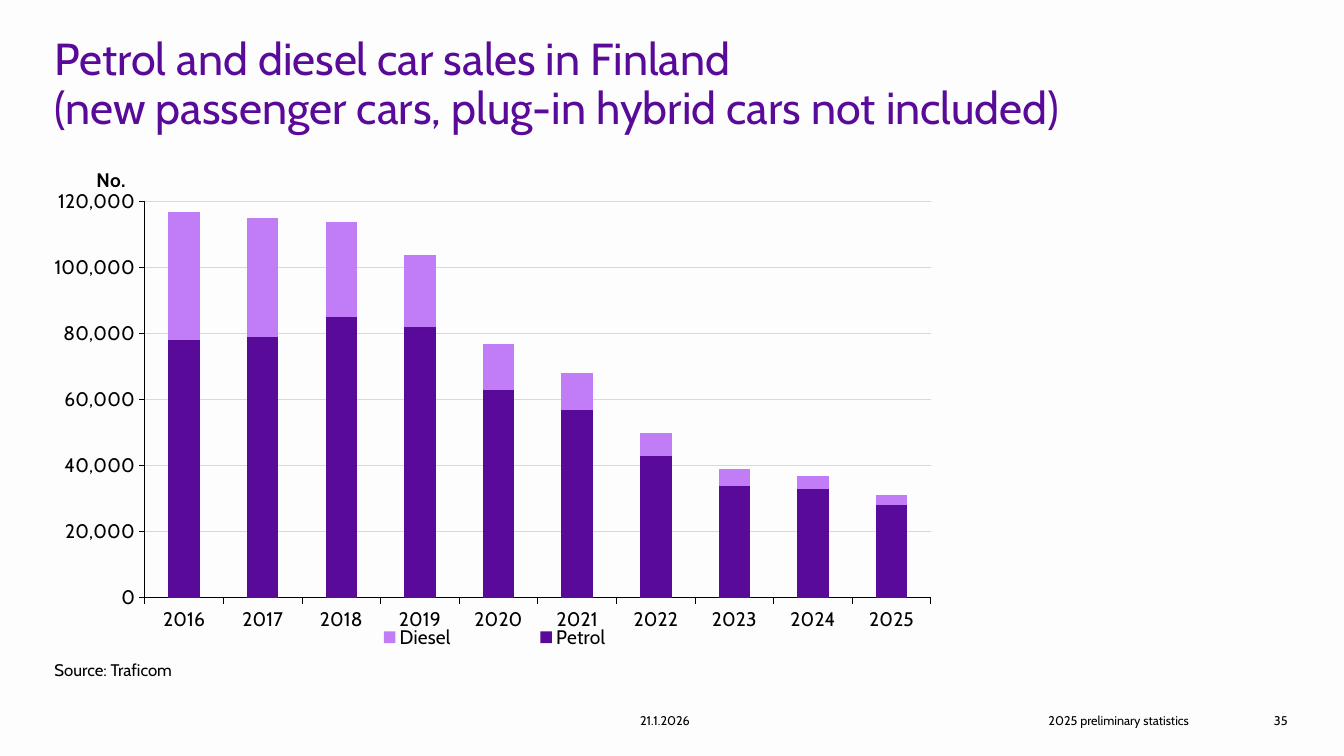
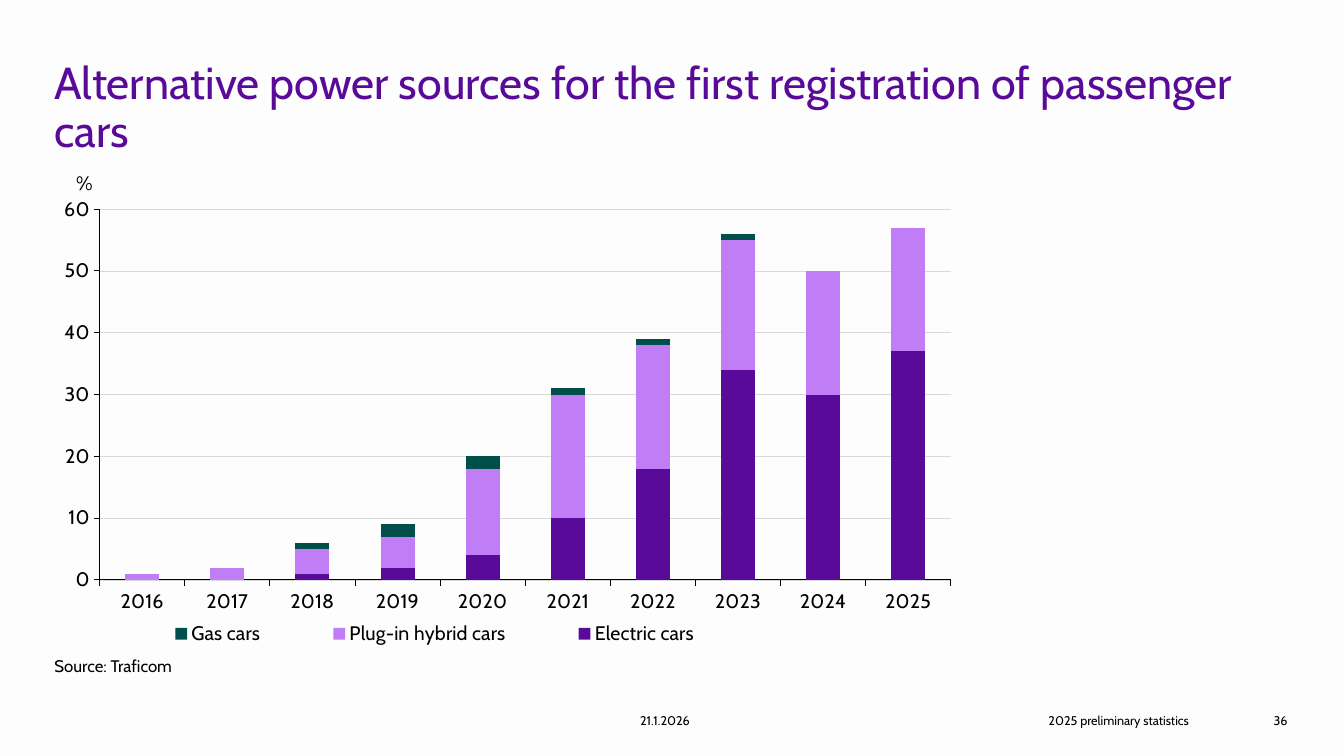
from lxml.etree import SubElement
from pptx import Presentation
from pptx.chart.data import CategoryChartData as Data
from pptx.dml.color import RGBColor
from pptx.enum.chart import XL_CHART_TYPE as Kind, XL_LEGEND_POSITION as Side, XL_TICK_MARK as Tick
from pptx.enum.text import MSO_ANCHOR as Anchor, PP_ALIGN as Align
from pptx.oxml.ns import qn
from pptx.util import Inches, Pt

FONT = "Cabin"
PAPER = RGBColor(0xFE, 0xFD, 0xFD)
BLACK = RGBColor(0, 0, 0)
PURPLE = RGBColor(0x59, 0x0A, 0x99)
LILAC = RGBColor(0xC0, 0x7D, 0xF6)
GREEN = RGBColor(0x00, 0x4F, 0x4B)
GREY = RGBColor(0xD9, 0xD9, 0xD9)
LEFT = 0.54
LABEL = (0.02, 0)
YEARS = [str(year) for year in range(2016, 2026)]

SLIDES = [
    {
        "lines": ["Petrol and diesel car sales in Finland",
                  "(new passenger cars, plug-in hybrid cars not included)"],
        "top": 0.32, "page": "35", "source": 6.52,
        "chart": (1.61, 8.78, 4.91),
        "unit": "No.", "bold": True, "max": 120000, "step": 20000,
        "plot": (0.08, 0.08, 0.91, 0.8),
        "legend": (0.26, 0.92, 0.45, 0.08),
        "series": [
            ("Petrol", PURPLE, [78000, 79000, 85000, 82000, 63000,
                                57000, 43000, 34000, 33000, 28000]),
            ("Diesel", LILAC, [39000, 36000, 29000, 22000, 14000,
                               11000, 7000, 5000, 4000, 3000]),
        ],
    },
    {
        "lines": ["Alternative power sources for the first registration of passenger cars"],
        "top": 0.55, "page": "36", "source": 6.48,
        "chart": (1.64, 8.98, 4.84),
        "unit": "%", "bold": False, "max": 60, "step": 10,
        "plot": (0.05, 0.09, 0.94, 0.76),
        "legend": (0.06, 0.92, 0.72, 0.08),
        "series": [
            ("Electric cars", PURPLE, [0, 0, 1, 2, 4, 10, 18, 34, 30, 37]),
            ("Plug-in hybrid cars", LILAC, [1, 2, 4, 5, 14, 20, 20, 21, 20, 20]),
            ("Gas cars", GREEN, [0, 0, 1, 2, 2, 1, 1, 1, 0, 0]),
        ],
    },
]


def write(slide, lines, box, size, color=BLACK, align=Align.LEFT,
          anchor=Anchor.TOP, pad=(0, 0.1), space=0.9):
    frame = slide.shapes.add_textbox(*[Inches(n) for n in box]).text_frame
    frame.word_wrap = True
    frame.vertical_anchor = anchor
    frame.margin_left, frame.margin_right = [Inches(n) for n in pad]
    para = frame.paragraphs[0]
    para.alignment = align
    para.line_spacing = space
    for i, line in enumerate(lines):
        if i:
            para.add_line_break()
        run = para.add_run()
        run.text = line
        run.font.name = FONT
        run.font.size = Pt(size)
        run.font.color.rgb = color


def place(part, index, spot, inner=False):
    for old in part.findall(qn("c:layout")):
        part.remove(old)
    layout = part.makeelement(qn("c:layout"))
    part.insert(index, layout)
    manual = SubElement(layout, qn("c:manualLayout"))
    if inner:
        SubElement(manual, qn("c:layoutTarget")).set("val", "inner")
    for mode in ("xMode", "yMode"):
        SubElement(manual, qn("c:" + mode)).set("val", "edge")
    for name, value in zip("xywh", spot):
        SubElement(manual, qn("c:" + name)).set("val", str(value))


deck = Presentation()
deck.slide_width, deck.slide_height = Inches(13.33), Inches(7.5)

for item in SLIDES:
    slide = deck.slides.add_slide(deck.slide_layouts[6])
    back = slide.background.fill
    back.solid()
    back.fore_color.rgb = PAPER

    write(slide, item["lines"], (LEFT, item["top"], 12.23, 1.09), 32, PURPLE)
    for text, left, width, align, pad in [
        ("21.1.2026", 6.04, 1.11, Align.CENTER, (0, 0)),
        ("2025 preliminary statistics", 7.39, 4.4, Align.RIGHT, (0.1, 0)),
        (item["page"], 12.02, 0.75, Align.RIGHT, (0.1, 0)),
    ]:
        write(slide, [text], (left, 6.95, width, 0.4), 9, align=align,
              anchor=Anchor.MIDDLE, pad=pad, space=1.0)
    write(slide, ["Source: Traficom"], (LEFT, item["source"], 8.33, 0.23), 12)

    data = Data(number_format="#,##0")
    data.categories = YEARS
    for name, color, values in item["series"]:
        data.add_series(name, values)
    box = [Inches(n) for n in (LEFT, *item["chart"])]
    chart = slide.shapes.add_chart(Kind.COLUMN_STACKED, *box, data).chart
    chart.has_title = False
    chart.font.name = FONT
    chart.font.size = Pt(14)
    chart.font.color.rgb = BLACK

    plot = chart.plots[0]
    plot.gap_width, plot.overlap = 150, 100
    plot.vary_by_categories = False
    for series, (name, color, values) in zip(plot.series, item["series"]):
        series.format.fill.solid()
        series.format.fill.fore_color.rgb = color

    for axis in (chart.category_axis, chart.value_axis):
        axis.major_tick_mark = Tick.OUTSIDE
        axis.minor_tick_mark = Tick.NONE
        axis.format.line.color.rgb = BLACK
        axis.format.line.width = Pt(0.75)
    axis.minimum_scale, axis.maximum_scale = 0, item["max"]
    axis.major_unit = item["step"]
    axis.tick_labels.number_format = "#,##0"
    axis.tick_labels.number_format_is_linked = False
    axis.has_major_gridlines = True
    grid = axis.major_gridlines.format.line
    grid.color.rgb = GREY
    grid.width = Pt(0.5)

    title = axis.axis_title
    run = title.text_frame.paragraphs[0].add_run()
    run.text = item["unit"]
    run.font.name = FONT
    run.font.size = Pt(14)
    run.font.bold = item["bold"]
    run.font.color.rgb = BLACK
    body = title.element.find(".//" + qn("a:bodyPr"))
    body.set("rot", "0")
    body.set("vert", "horz")

    chart.has_legend = True
    chart.legend.position = Side.RIGHT
    chart.legend.include_in_layout = False
    chart.legend.font.name = FONT
    chart.legend.font.size = Pt(14)
    chart.legend.font.color.rgb = BLACK

    root = chart.element
    place(root.find(".//" + qn("c:plotArea")), 0, item["plot"], True)
    place(title.element, 1, LABEL)
    place(root.find(".//" + qn("c:legend")), 1, item["legend"])

deck.save("out.pptx")
